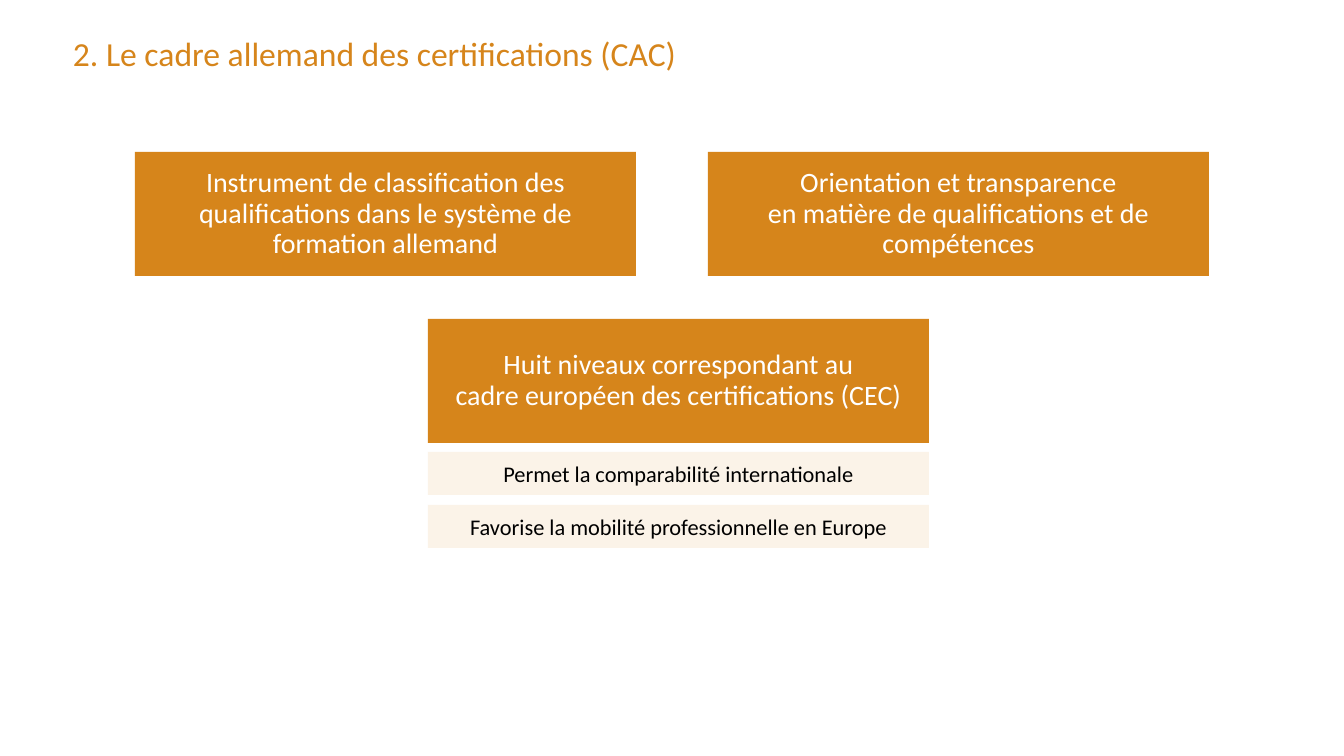
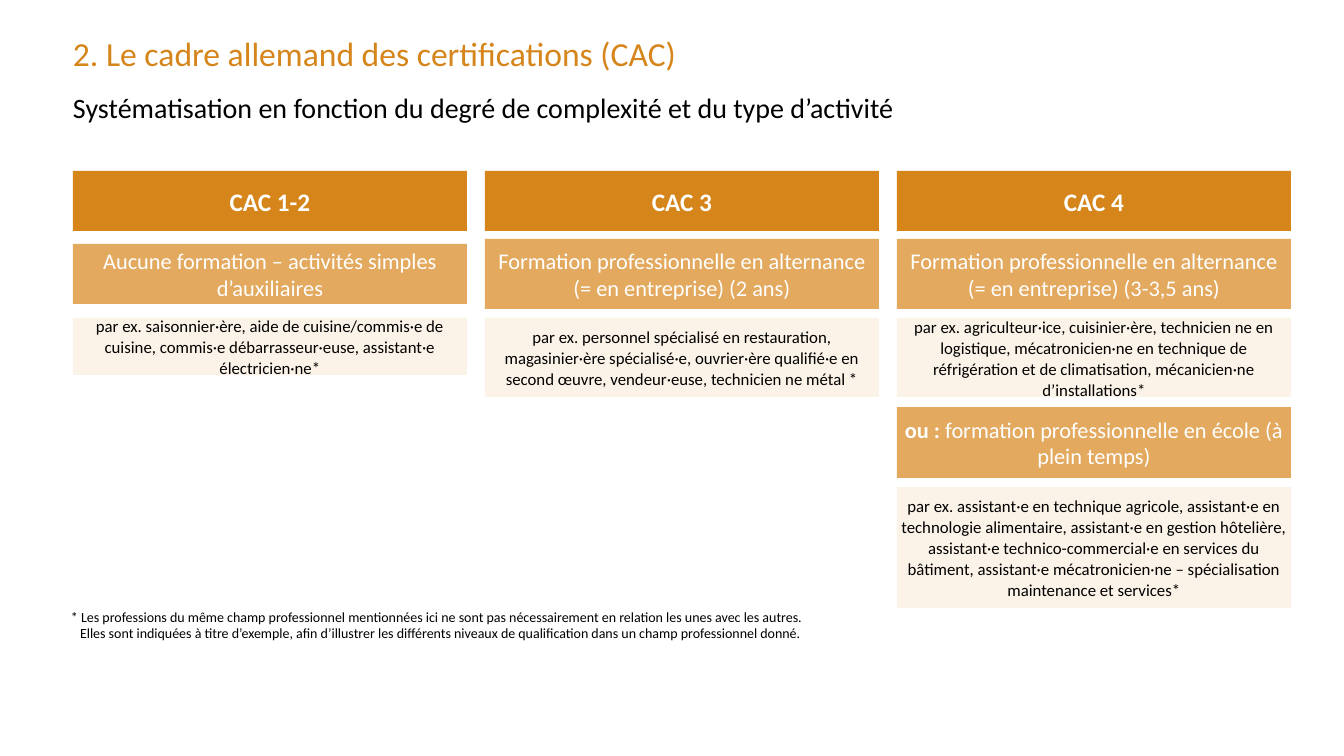
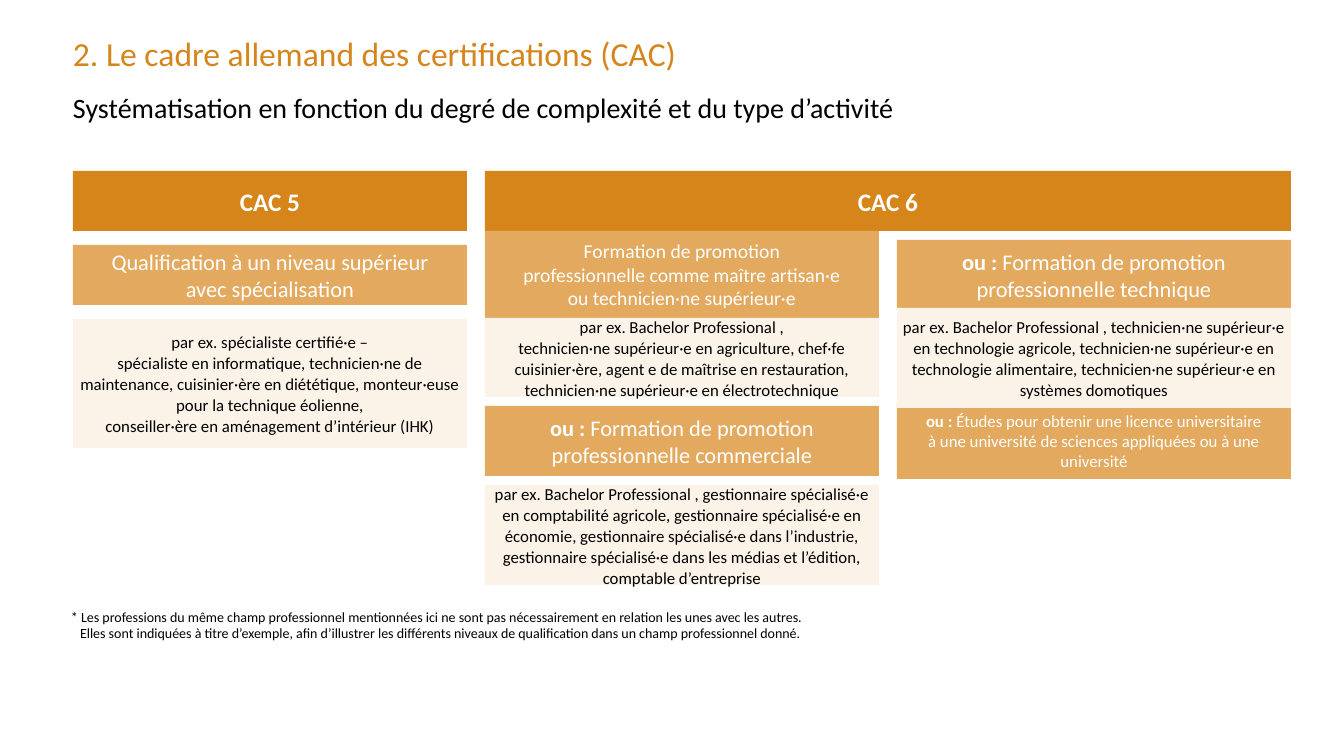
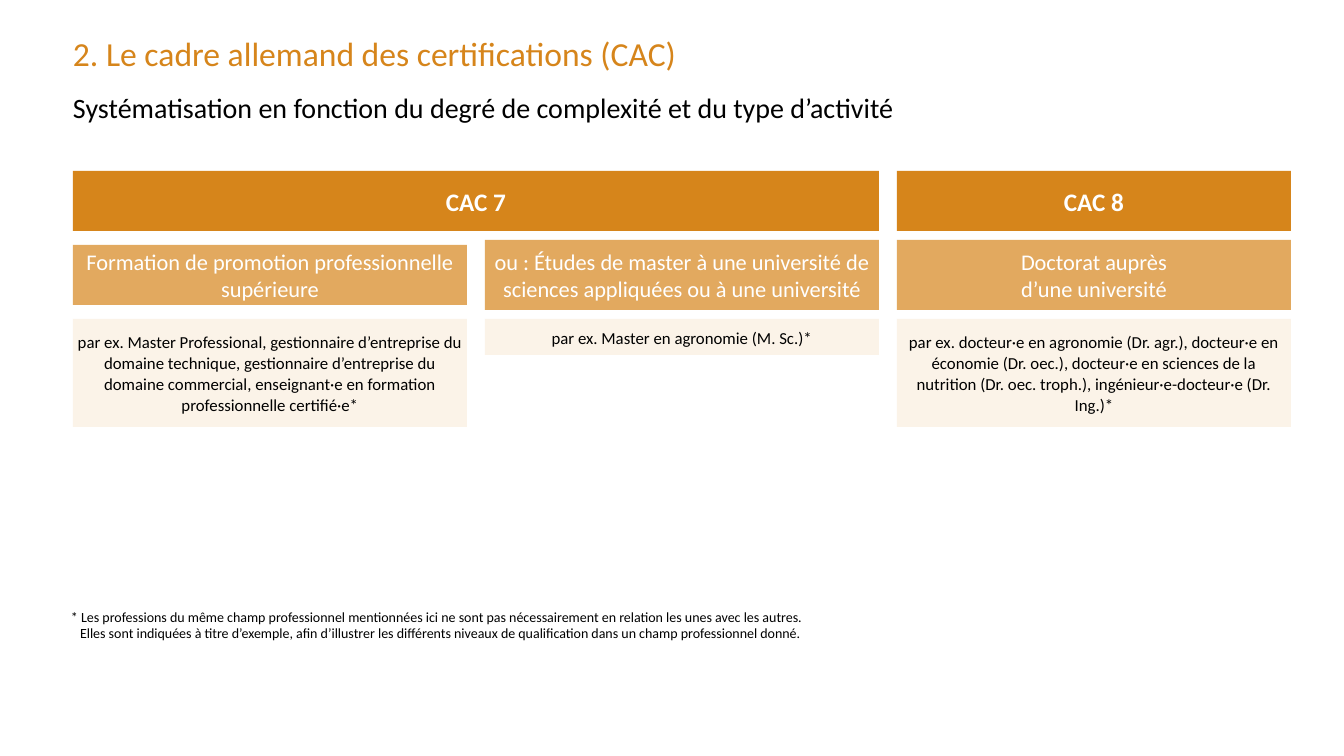
from dataclasses import dataclass

from pptx import Presentation
from pptx.dml.color import RGBColor
from pptx.enum.shapes import MSO_SHAPE
from pptx.enum.text import MSO_ANCHOR, MSO_AUTO_SIZE, PP_ALIGN
from pptx.util import Emu, Pt

RECT = MSO_SHAPE.RECTANGLE
TOP, MIDDLE = MSO_ANCHOR.TOP, MSO_ANCHOR.MIDDLE
LEFT, CENTER = PP_ALIGN.LEFT, PP_ALIGN.CENTER
NO_FIT = MSO_AUTO_SIZE.NONE
TITLE_ONLY = 5

SLIDE_W, SLIDE_H = 1344, 756
EMU_PER_PX = 12192000 / SLIDE_W
FONT = "Calibri"
ORANGE, AMBER, CREAM = "D6851B", "E2A95F", "FBF3E8"
WHITE, BLACK = "FFFFFF", "000000"

MARGIN = 73
COL_W, COL_GAP = 394, 18
LEVEL_TOP, LEVEL_H = 171, 60

TITLE = "2. Le cadre allemand des certifications (CAC)"
SUBTITLE = "Systématisation en fonction du degré de complexité et du type d’activité"
FOOTNOTE = (
    "* Les professions du même champ professionnel mentionnées ici ne sont pas "
    "nécessairement en relation les unes avec les autres.\n"
    "Elles sont indiquées à titre d’exemple, afin d’illustrer les différents niveaux "
    "de qualification dans un champ professionnel donné."
)


@dataclass
class Style:
    size: int
    color: str
    fill: str = ""
    bold: bool = False
    spacing: object = None
    align: object = CENTER
    anchor: object = MIDDLE
    insets: tuple = (4, 0, 4, 0)


PLAIN = dict(align=LEFT, anchor=TOP, insets=(0, 0, 0, 0))
TITLE_STYLE = Style(24, ORANGE, spacing=1.0, **PLAIN)
SUBTITLE_STYLE = Style(20, BLACK, **PLAIN)
FOOTNOTE_STYLE = Style(10, BLACK, **PLAIN)
KEY = Style(20, WHITE, ORANGE, spacing=0.9, insets=(12, 12, 12, 12))
BENEFIT = Style(16, BLACK, CREAM)
LEVEL = Style(18, WHITE, ORANGE, bold=True, spacing=Pt(17), insets=(4, 8, 4, 0))
PATH = Style(16, WHITE, AMBER)
PATH_14 = Style(14, WHITE, AMBER)
PATH_12 = Style(12, WHITE, AMBER)
JOBS = Style(12, BLACK, CREAM, spacing=Pt(15))


def px(n):
    return Emu(round(n * EMU_PER_PX))


def rgb(color):
    return RGBColor.from_string(color)


def write(sp, text, style, lead=""):
    """Set the text of a shape; lead is a bold start, a newline is a line break."""
    tf = sp.text_frame
    tf.word_wrap = True
    tf.auto_size = NO_FIT
    tf.vertical_anchor = style.anchor
    tf.margin_left, tf.margin_top, tf.margin_right, tf.margin_bottom = map(px, style.insets)
    p = tf.paragraphs[0]
    p.alignment = style.align
    if style.spacing:
        p.line_spacing = style.spacing
    p.font.name = FONT
    p.font.size = Pt(style.size)
    p.font.bold = style.bold
    p.font.color.rgb = rgb(style.color)
    if lead:
        r = p.add_run()
        r.text = lead
        r.font.bold = True
    for i, line in enumerate(text.split("\n")):
        if i:
            p.add_line_break()
        p.add_run().text = line
    return p


def add_box(s, x, y, w, h, text, style, lead=""):
    sp = s.shapes.add_shape(RECT, px(x), px(y), px(w), px(h))
    sp.shadow.inherit = False
    sp.fill.solid()
    sp.fill.fore_color.rgb = rgb(style.fill)
    sp.line.fill.background()
    write(sp, text, style, lead)


def add_text(s, x, y, w, h, text, style):
    return write(s.shapes.add_textbox(px(x), px(y), px(w), px(h)), text, style)


def add_slide(prs):
    s = prs.slides.add_slide(prs.slide_layouts[TITLE_ONLY])
    sp = s.shapes.title
    sp.left, sp.top, sp.width, sp.height = map(px, (MARGIN, 33, 992, 49))
    write(sp, TITLE, TITLE_STYLE)
    return s


def add_footnote(s, x, y):
    p = add_text(s, x, y, 800, 36, FOOTNOTE, FOOTNOTE_STYLE)
    pPr = p._p.get_or_add_pPr()
    pPr.set("marL", str(px(9)))
    pPr.set("indent", str(-px(9)))


def add_level(s, x, y, name, columns):
    """Draw a heading over its columns of (offset, height, style, text, lead) boxes."""
    n = len(columns)
    add_box(s, x, y, n * COL_W + (n - 1) * COL_GAP, LEVEL_H, name, LEVEL)
    for i, column in enumerate(columns):
        for dy, h, style, text, *lead in column:
            add_box(s, x + i * (COL_W + COL_GAP), y + dy, COL_W, h, text, style, *lead)


def overview_slide(prs):
    s = add_slide(prs)
    w, h = 501, 124
    keys = [
        (135, 152, "Instrument de classification des qualifications dans le système de "
                   "formation allemand"),
        (708, 152, "Orientation et transparence\nen matière de qualifications et de\n"
                   "compétences"),
        (428, 319, "Huit niveaux correspondant au\ncadre européen des certifications (CEC)"),
    ]
    for x, y, text in keys:
        add_box(s, x, y, w, h, text, KEY)
    benefits = ["Permet la comparabilité internationale",
                "Favorise la mobilité professionnelle en Europe"]
    for i, text in enumerate(benefits):
        add_box(s, x, y + h + 9 + i * 53, w, 43, text, BENEFIT)


def levels_slide(prs, levels):
    s = add_slide(prs)
    add_text(s, MARGIN, 91, 1219, 48, SUBTITLE, SUBTITLE_STYLE)
    x = MARGIN
    for name, columns in levels:
        add_level(s, x, LEVEL_TOP, name, columns)
        x += len(columns) * (COL_W + COL_GAP)
    add_footnote(s, 71, 608)


LEVELS_2_TO_4 = [
    ("CAC 1-2", [[
        (73, 60, PATH, "Aucune formation – activités simples d’auxiliaires"),
        (147, 57, JOBS, "par ex. saisonnier·ère, aide de cuisine/commis·e de cuisine, "
                        "commis·e débarrasseur·euse, assistant·e électricien·ne*"),
    ]]),
    ("CAC 3", [[
        (68, 70, PATH, "Formation professionnelle en alternance (= en entreprise) (2 ans)"),
        (147, 79, JOBS, "par ex. personnel spécialisé en restauration, magasinier·ère "
                        "spécialisé·e, ouvrier·ère qualifié·e en second œuvre, "
                        "vendeur·euse, technicien ne métal *"),
    ]]),
    ("CAC 4", [[
        (68, 70, PATH, "Formation professionnelle en alternance (= en entreprise) (3-3,5 ans)"),
        (147, 79, JOBS, "par ex. agriculteur·ice, cuisinier·ère, technicien ne en logistique, "
                        "mécatronicien·ne en technique de réfrigération et de climatisation, "
                        "mécanicien·ne d’installations*"),
        (236, 71, PATH, "formation professionnelle en école (à plein temps)", "ou : "),
        (316, 121, JOBS, "par ex. assistant·e en technique agricole, assistant·e en technologie "
                         "alimentaire, assistant·e en gestion hôtelière, assistant·e "
                         "technico-commercial·e en services du bâtiment, assistant·e "
                         "mécatronicien·ne – spécialisation maintenance et services*"),
    ]]),
]

LEVELS_5_TO_6 = [
    ("CAC 5", [[
        (74, 60, PATH, "Qualification à un niveau supérieur\navec spécialisation"),
        (148, 129, JOBS, "par ex. spécialiste certifié·e –\nspécialiste en informatique, "
                         "technicien·ne de maintenance, cuisinier·ère en diététique, "
                         "monteur·euse\npour la technique éolienne,\n"
                         "conseiller·ère en aménagement d’intérieur (IHK)"),
    ]]),
    ("CAC 6", [
        [
            (60, 87, PATH_14, "Formation de promotion\nprofessionnelle comme maître artisan·e\n"
                              "ou technicien·ne supérieur·e"),
            (147, 79, JOBS, "par ex. Bachelor Professional ,\ntechnicien·ne supérieur·e en "
                            "agriculture, chef·fe cuisinier·ère, agent e de maîtrise en "
                            "restauration, technicien·ne supérieur·e en électrotechnique"),
            (235, 70, PATH, "Formation de promotion professionnelle commerciale", "ou : "),
            (314, 100, JOBS, "par ex. Bachelor Professional , gestionnaire spécialisé·e en "
                             "comptabilité agricole, gestionnaire spécialisé·e en économie, "
                             "gestionnaire spécialisé·e dans l’industrie, gestionnaire "
                             "spécialisé·e dans les médias et l’édition, comptable d’entreprise"),
        ],
        [
            (231, 77, PATH_12, "Études pour obtenir une licence universitaire\nà une université "
                               "de sciences appliquées ou à une université", "ou : "),
            (69, 70, PATH, "Formation de promotion\nprofessionnelle technique", "ou : "),
            (137, 100, JOBS, "par ex. Bachelor Professional , technicien·ne supérieur·e en "
                             "technologie agricole, technicien·ne supérieur·e en technologie "
                             "alimentaire, technicien·ne supérieur·e en systèmes domotiques"),
        ],
    ]),
]

LEVELS_7_TO_8 = [
    ("CAC 7", [
        [
            (74, 60, PATH, "Formation de promotion professionnelle supérieure"),
            (148, 108, JOBS, "par ex. Master Professional, gestionnaire d’entreprise du domaine "
                             "technique, gestionnaire d’entreprise du domaine commercial, "
                             "enseignant·e en formation professionnelle certifié·e*"),
        ],
        [
            (69, 70, PATH, "ou : Études de master à une université de sciences appliquées "
                           "ou à une université"),
            (148, 36, JOBS, "par ex. Master en agronomie (M. Sc.)*"),
        ],
    ]),
    ("CAC 8", [[
        (69, 70, PATH, "Doctorat auprès\nd’une université"),
        (148, 108, JOBS, "par ex. docteur·e en agronomie (Dr. agr.), docteur·e en économie "
                         "(Dr. oec.), docteur·e en sciences de la nutrition (Dr. oec. troph.), "
                         "ingénieur·e-docteur·e (Dr. Ing.)*"),
    ]]),
]


def main():
    prs = Presentation()
    prs.slide_width, prs.slide_height = px(SLIDE_W), px(SLIDE_H)
    overview_slide(prs)
    for levels in (LEVELS_2_TO_4, LEVELS_5_TO_6, LEVELS_7_TO_8):
        levels_slide(prs, levels)
    prs.save("out.pptx")


if __name__ == "__main__":
    main()
